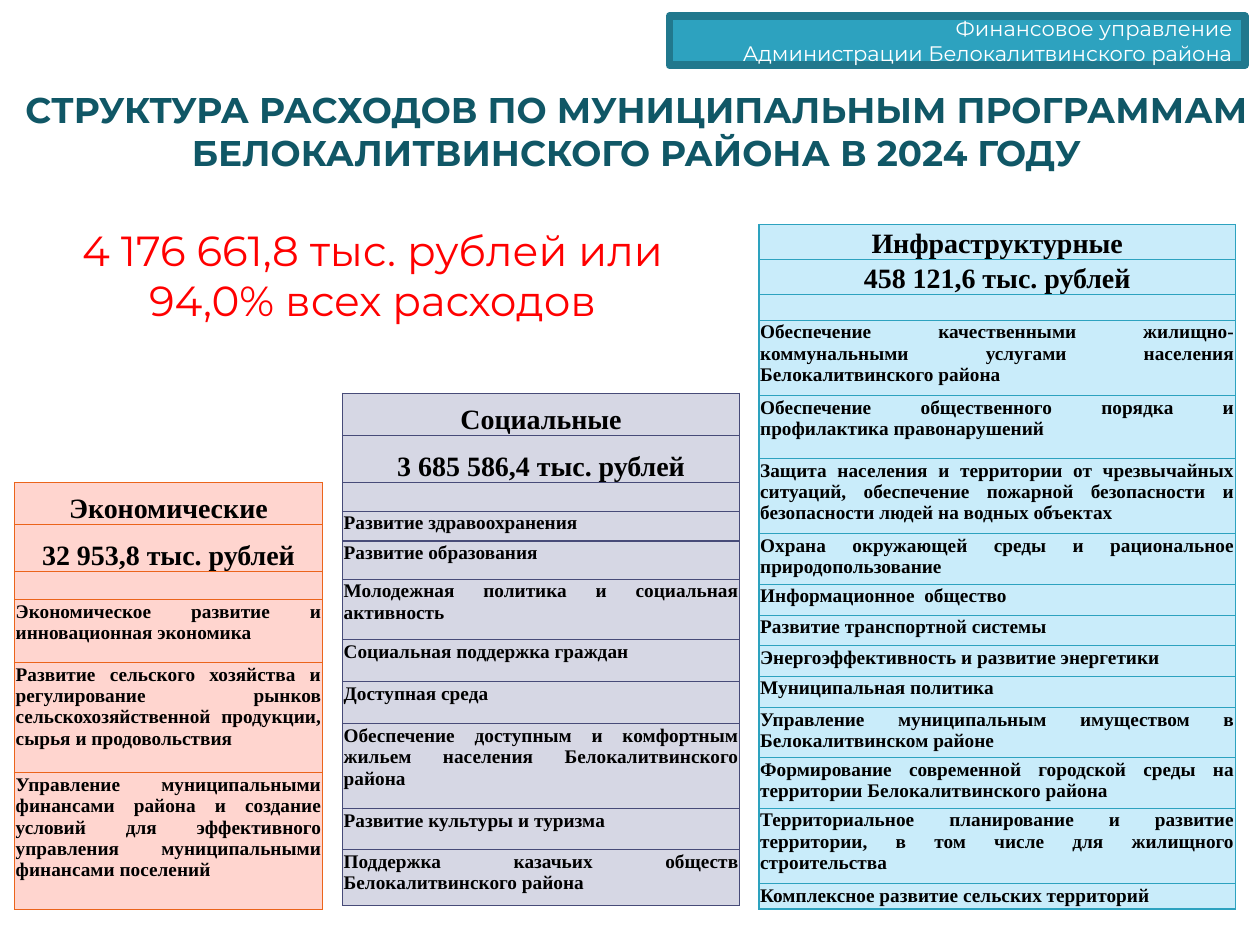
import pptx
import pptx.dml.color
import pptx.enum.shapes
import pptx.enum.text
import pptx.oxml
import pptx.oxml.ns
import pptx.util

Pt = pptx.util.Pt
RGBColor = pptx.dml.color.RGBColor
ALIGN = pptx.enum.text.PP_ALIGN
ANCHOR = pptx.enum.text.MSO_ANCHOR

WHITE = RGBColor(0xFF, 0xFF, 0xFF)
BLACK = RGBColor(0, 0, 0)
RED = RGBColor(0xFF, 0, 0)
DARK_TEAL = RGBColor(0x10, 0x57, 0x66)
TEAL = RGBColor(0x2D, 0xA2, 0xBF)
TEAL_EDGE = RGBColor(0x21, 0x78, 0x8D)
PALE_TEAL = RGBColor(0xC9, 0xEC, 0xFA)
ORANGE = RGBColor(0xEB, 0x64, 0x1B)
PALE_ORANGE = RGBColor(0xFF, 0xD5, 0xCF)
INDIGO = RGBColor(0x47, 0x4B, 0x78)
PALE_INDIGO = RGBColor(0xD6, 0xD7, 0xE4)


def write(frame, text, size, color, font="Montserrat", bold=False, align=ALIGN.CENTER):
    frame.word_wrap = True
    frame.text = text
    for paragraph in frame.paragraphs:
        paragraph.alignment = align
        paragraph.font.size = Pt(size)
        paragraph.font.name = font
        paragraph.font.bold = bold
        paragraph.font.color.rgb = color


def outline(cell, color):
    properties = cell._tc.get_or_add_tcPr()
    for position, side in enumerate(("lnL", "lnR", "lnT", "lnB")):
        border = pptx.oxml.parse_xml(
            f'<a:{side} {pptx.oxml.ns.nsdecls("a")} w="{Pt(0.75)}"><a:solidFill>'
            f'<a:srgbClr val="{color}"/></a:solidFill></a:{side}>')
        properties.insert(position, border)


deck = pptx.Presentation()
deck.slide_width, deck.slide_height = Pt(720), Pt(540)
slide = deck.slides.add_slide(deck.slide_layouts[5])

title = slide.shapes.title
title.left, title.top, title.width, title.height = Pt(0), Pt(49), Pt(720), Pt(51)
heading = title.text_frame
heading.auto_size = pptx.enum.text.MSO_AUTO_SIZE.NONE
heading.vertical_anchor = ANCHOR.MIDDLE
heading.margin_left, heading.margin_right = Pt(14.4), Pt(7.2)
heading.margin_top = heading.margin_bottom = Pt(3.6)
write(heading, "СТРУКТУРА РАСХОДОВ ПО МУНИЦИПАЛЬНЫМ ПРОГРАММАМ БЕЛОКАЛИТВИНСКОГО РАЙОНА В 2024 ГОДУ",
      20.4, DARK_TEAL, bold=True)

department = slide.shapes.add_shape(
    pptx.enum.shapes.MSO_SHAPE.RECTANGLE, Pt(382.5), Pt(9.3), Pt(329), Pt(28))
department.shadow.inherit = False
department.fill.solid()
department.fill.fore_color.rgb = TEAL
department.line.color.rgb = TEAL_EDGE
department.line.width = Pt(4.33)
department.text_frame.vertical_anchor = ANCHOR.MIDDLE
write(department.text_frame, "Финансовое управление\nАдминистрации Белокалитвинского района",
      12, WHITE, align=ALIGN.RIGHT)

total = slide.shapes.add_textbox(Pt(14.4), Pt(106), Pt(397), Pt(102))
total.text_frame.vertical_anchor = ANCHOR.MIDDLE
write(total.text_frame, "4 176 661,8 тыс. рублей или 94,0% всех расходов", 24, RED)

groups = [
    (8.3, 275.7, 176, ORANGE, PALE_ORANGE, [
        ("Экономические", 24),
        ("32 953,8 тыс. рублей", 27),
        ("", 16),
        ("Экономическое развитие и инновационная экономика", 36),
        ("Развитие сельского хозяйства и регулирование рынков сельскохозяйственной продукции, "
         "сырья и продовольствия", 63),
        ("Управление муниципальными финансами района и создание условий для эффективного "
         "управления муниципальными финансами поселений", 78),
    ]),
    (195.7, 224.7, 227, INDIGO, PALE_INDIGO, [
        ("Социальные", 24),
        ("3 685 586,4 тыс. рублей", 27),
        ("", 16.5),
        ("Развитие здравоохранения", 17),
        ("Развитие образования", 22),
        ("Молодежная политика и социальная активность", 34.5),
        ("Социальная поддержка граждан", 24),
        ("Доступная среда", 24),
        ("Обеспечение доступным и комфортным жильем населения Белокалитвинского района", 48.5),
        ("Развитие культуры и туризма", 23.5),
        ("Поддержка казачьих обществ Белокалитвинского района", 32),
    ]),
    (433.7, 128.2, 272.3, TEAL, PALE_TEAL, [
        ("Инфраструктурные", 19.7),
        ("458 121,6 тыс. рублей", 20),
        ("", 15),
        ("Обеспечение качественными жилищно-коммунальными услугами населения "
         "Белокалитвинского района", 43),
        ("Обеспечение общественного порядка и профилактика правонарушений", 36),
        ("Защита населения и территории от чрезвычайных ситуаций, обеспечение пожарной "
         "безопасности и безопасности людей на водных объектах", 43),
        ("Охрана окружающей среды и рациональное природопользование", 29),
        ("Информационное  общество", 17.5),
        ("Развитие транспортной системы", 17.5),
        ("Энергоэффективность и развитие энергетики", 17.5),
        ("Муниципальная политика", 18),
        ("Управление муниципальным имуществом в Белокалитвинском районе", 28.5),
        ("Формирование современной городской среды на территории Белокалитвинского района", 29),
        ("Территориальное планирование и развитие территории, в том числе для жилищного "
         "строительства", 43),
        ("Комплексное развитие сельских территорий", 14.5),
    ]),
]

for left, top, width, edge, tint, programs in groups:
    height = sum(row_height for _, row_height in programs)
    table = slide.shapes.add_table(
        len(programs), 1, Pt(left), Pt(top), Pt(width), Pt(height)).table
    table.first_row = table.horz_banding = False
    for index, (program, row_height) in enumerate(programs):
        table.rows[index].height = Pt(row_height)
        cell = table.cell(index, 0)
        cell.margin_left = cell.margin_right = cell.margin_top = Pt(0.7)
        cell.margin_bottom = Pt(0)
        cell.fill.solid()
        cell.fill.fore_color.rgb = tint
        outline(cell, edge)
        is_header = index < 2
        cell.vertical_anchor = ANCHOR.BOTTOM if is_header else ANCHOR.TOP
        write(cell.text_frame, program, 16 if is_header else 11, BLACK,
              font="Times New Roman", bold=True,
              align=ALIGN.CENTER if is_header else ALIGN.JUSTIFY)

deck.save("out.pptx")
